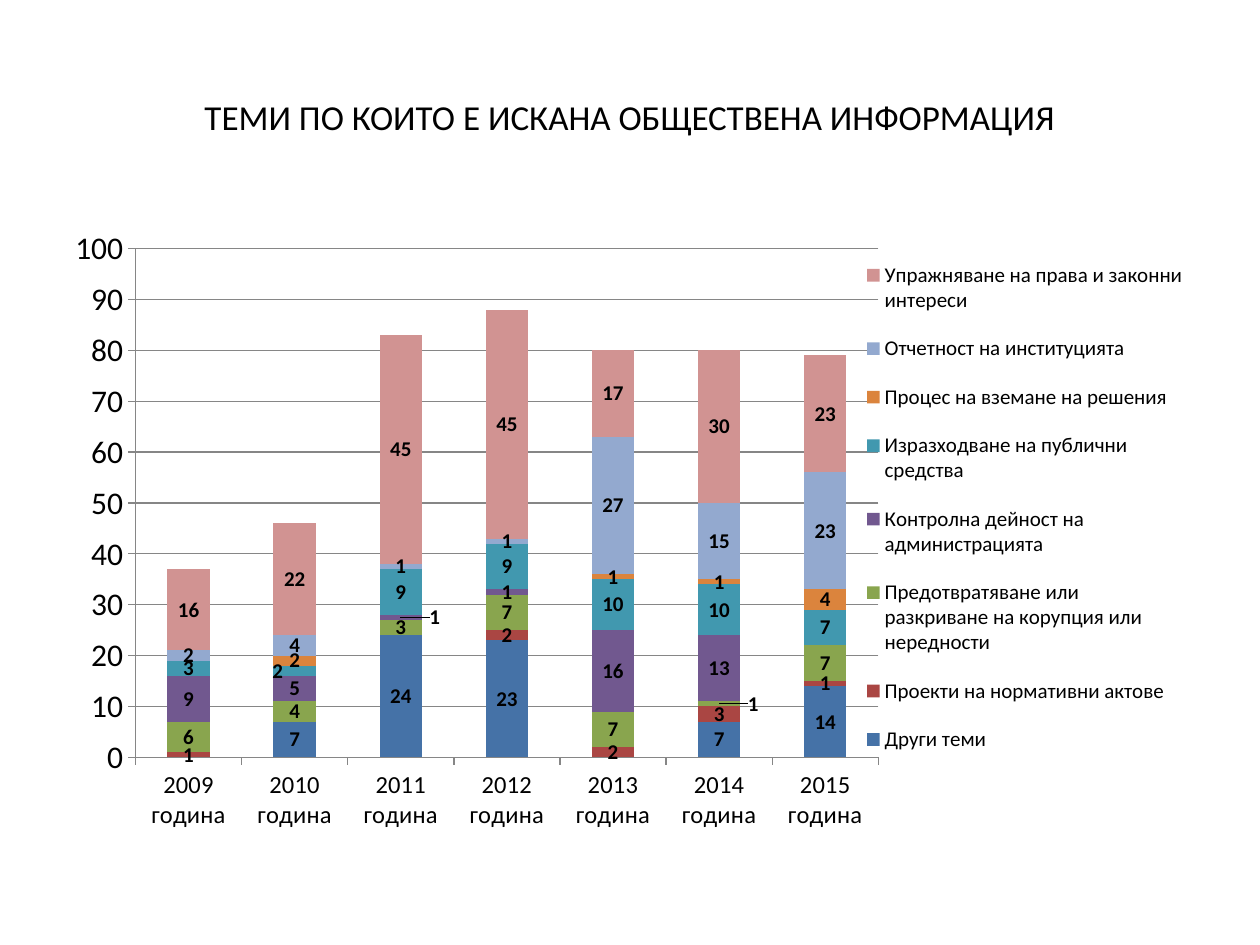
from lxml import etree
from pptx import Presentation
from pptx.chart.data import CategoryChartData
from pptx.dml.color import RGBColor
from pptx.enum.chart import XL_CHART_TYPE, XL_LABEL_POSITION, XL_LEGEND_POSITION, XL_TICK_MARK
from pptx.enum.text import MSO_ANCHOR, PP_ALIGN
from pptx.oxml.ns import qn
from pptx.util import Inches, Pt

FONT = "Calibri"
COLORS = {
    "text": "000000", "line": "868686",
    "blue": "4572A7", "red": "AA4643", "green": "89A54E", "purple": "71588F",
    "teal": "4198AF", "orange": "DB843D", "light blue": "93A9CF", "pink": "D19392",
}
YEARS = [f"{year} година" for year in range(2009, 2016)]
TOPICS = [
    ("Други теми", "blue", (None, 7, 24, 23, None, 7, 14)),
    ("Проекти на нормативни актове", "red", (1, None, None, 2, 2, 3, 1)),
    ("Предотвратяване или разкриване на корупция или нередности", "green", (6, 4, 3, 7, 7, 1, 7)),
    ("Контролна дейност на администрацията", "purple", (9, 5, 1, 1, 16, 13, None)),
    ("Изразходване на публични средства", "teal", (3, 2, 9, 9, 10, 10, 7)),
    ("Процес на вземане на решения", "orange", (None, 2, None, None, 1, 1, 4)),
    ("Отчетност на институцията", "light blue", (2, 4, 1, 1, 27, 15, 23)),
    ("Упражняване на права и законни интереси", "pink", (16, 22, 45, 45, 17, 30, 23)),
]
# Labels moved beside their column: (topic, year) -> horizontal shift
SHIFTED_LABELS = {(2, 5): 0.03, (3, 2): 0.03, (4, 1): -0.015}


def color(name):
    return RGBColor.from_string(COLORS[name])


def style_font(font, size, bold=False):
    font.name, font.size, font.bold = FONT, Pt(size), bold
    font.color.rgb = color("text")


def manual_layout(**settings):
    layout = etree.Element(qn("c:layout"))
    manual = etree.SubElement(layout, qn("c:manualLayout"))
    for tag, value in settings.items():
        etree.SubElement(manual, qn(f"c:{tag}")).set("val", str(value))
    return layout


def set_layout(parent, before, layout):
    for old in parent.findall(qn("c:layout")):
        parent.remove(old)
    parent.find(qn(before)).addnext(layout)


def add_title(page, left, top, width, height):
    title = page.shapes.title
    title.left, title.top, title.width, title.height = left, top, width, height
    title.text_frame.text = "ТЕМИ ПО КОИТО Е ИСКАНА ОБЩЕСТВЕНА ИНФОРМАЦИЯ"
    title.text_frame.vertical_anchor = MSO_ANCHOR.MIDDLE
    para = title.text_frame.paragraphs[0]
    para.alignment = PP_ALIGN.CENTER
    style_font(para.font, 20)


def style_axes(chart):
    for axis, size in ((chart.category_axis, 14), (chart.value_axis, 18)):
        style_font(axis.tick_labels.font, size)
        axis.major_tick_mark = XL_TICK_MARK.OUTSIDE
        axis.minor_tick_mark = XL_TICK_MARK.NONE
        axis.format.line.color.rgb = color("line")
    values = chart.value_axis
    values.minimum_scale, values.maximum_scale, values.major_unit = 0, 100, 10
    values.has_major_gridlines = True
    values.major_gridlines.format.line.color.rgb = color("line")


def style_series(plot):
    for topic, (series, (_, fill, _)) in enumerate(zip(plot.series, TOPICS)):
        series.format.fill.solid()
        series.format.fill.fore_color.rgb = color(fill)
        labels = series.data_labels
        labels.show_value = True
        style_font(labels.font, 12, bold=True)
        for (shifted_topic, year), shift in SHIFTED_LABELS.items():
            if shifted_topic == topic:
                label = series.points[year].data_label
                label.position = XL_LABEL_POSITION.CENTER
                style_font(label.font, 12, bold=True)
                element = series._element.find(f"{qn('c:dLbls')}/{qn('c:dLbl')}")
                set_layout(element, "c:idx", manual_layout(x=shift, y=0))


def add_topics_chart(page, left, top, width, height):
    data = CategoryChartData()
    data.categories = YEARS
    for name, _, values in TOPICS:
        data.add_series(name, values)
    chart = page.shapes.add_chart(
        XL_CHART_TYPE.COLUMN_STACKED, left, top, width, height, data).chart
    chart.has_title = False
    style_font(chart.font, 18)
    plot = chart.plots[0]
    plot.gap_width, plot.overlap, plot.vary_by_categories = 150, 100, False
    style_axes(chart)
    style_series(plot)

    # Legend and plot area positions
    chart.has_legend = True
    chart.legend.position = XL_LEGEND_POSITION.RIGHT
    chart.legend.include_in_layout = False
    style_font(chart.legend.font, 12)
    set_layout(chart.legend._element, "c:legendPos", manual_layout(
        xMode="edge", yMode="edge", x=0.72, y=0.03, w=0.28, h=0.86))
    area = chart._chartSpace.find(f".//{qn('c:plotArea')}")
    for old in area.findall(qn("c:layout")):
        area.remove(old)
    area.insert(0, manual_layout(layoutTarget="inner", xMode="edge", yMode="edge",
                                 x=0.064, y=0.045, w=0.655, h=0.816))


def main():
    deck = Presentation()
    deck.slide_width, deck.slide_height = Inches(10), Inches(7.5)
    page = deck.slides.add_slide(deck.slide_layouts[5])
    add_title(page, Inches(0.5), Inches(0.3), Inches(9), Inches(1.25))
    add_topics_chart(page, Inches(0.5), Inches(1.75), Inches(9), Inches(4.95))
    deck.save("out.pptx")


if __name__ == "__main__":
    main()
